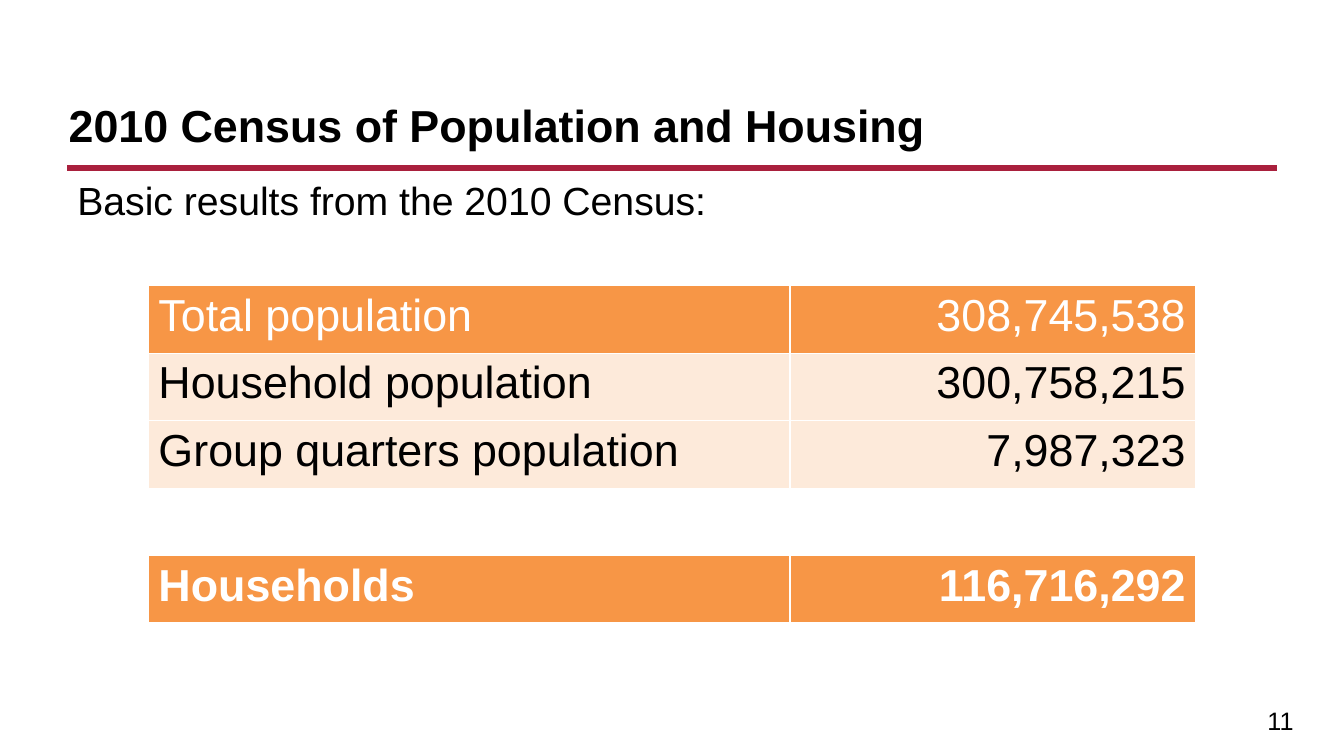
from lxml import etree
from pptx import Presentation
from pptx import util as u
from pptx.dml.color import RGBColor
from pptx.enum import shapes, text
from pptx.oxml import ns

COLORS = {"ink": "000000", "white": "FFFFFF", "rule": "A9203D",
          "orange": "F79646", "peach": "FDEADA"}
FONT = "Arial"
RIGHT = text.PP_ALIGN.RIGHT

# label, value, fill, text colour, bold
CENSUS_ROWS = [
    ("Total population", "308,745,538", "orange", "white", False),
    ("Household population", "300,758,215", "peach", "ink", False),
    ("Group quarters population", "7,987,323", "peach", "ink", False),
    ("", "", "white", "ink", False),
    ("Households", "116,716,292", "orange", "white", True),
]


def rgb(name):
    return RGBColor.from_string(COLORS[name])


def write(tf, words, size, color="ink", bold=False, align=None, spacing=None):
    p = tf.paragraphs[0]
    p.alignment = align
    p.line_spacing = spacing
    p.font.size = u.Pt(size)
    if words:
        r = p.add_run()
        r.text = words
        r.font.name = FONT
        r.font.size = u.Pt(size)
        r.font.bold = bold
        r.font.color.rgb = rgb(color)


def add_text(s, box, words, size, anchor=text.MSO_ANCHOR.TOP, **fmt):
    tf = s.shapes.add_textbox(*map(u.Cm, box)).text_frame
    tf.word_wrap = True
    tf.vertical_anchor = anchor
    write(tf, words, size, **fmt)


def border_cell(cell, color="white", width=1):
    tcPr = cell._tc.get_or_add_tcPr()
    for i, side in enumerate(("a:lnL", "a:lnR", "a:lnT", "a:lnB")):
        ln = etree.Element(ns.qn(side), w=str(u.Pt(width)))
        fill = etree.SubElement(ln, ns.qn("a:solidFill"))
        etree.SubElement(fill, ns.qn("a:srgbClr"), val=COLORS[color])
        tcPr.insert(i, ln)


def add_header(s, left, top, width, height):
    # Title sits on the rule along the bottom of the box
    add_text(s, (left - 0.22, top, width, height - 0.3),
             "2010 Census of Population and Housing", 32,
             anchor=text.MSO_ANCHOR.BOTTOM, bold=True)
    y = u.Cm(top + height)
    rule = s.shapes.add_connector(shapes.MSO_CONNECTOR.STRAIGHT,
                                  u.Cm(left), y, u.Cm(left + width), y)
    rule.line.color.rgb = rgb("rule")
    rule.line.width = u.Pt(4.5)
    etree.SubElement(rule._element.spPr, ns.qn("a:effectLst"))


def add_census_table(s, left, top, width, height):
    box = map(u.Cm, (left, top, width, height))
    table = s.shapes.add_table(len(CENSUS_ROWS), 2, *box).table
    label_width = 16.17
    table.columns[0].width = u.Cm(label_width)
    table.columns[1].width = u.Cm(width - label_width)
    for i, (label, value, fill, color, bold) in enumerate(CENSUS_ROWS):
        for j, (words, align) in enumerate(((label, None), (value, RIGHT))):
            cell = table.cell(i, j)
            cell.fill.solid()
            cell.fill.fore_color.rgb = rgb(fill)
            border_cell(cell)
            write(cell.text_frame, words, 32, color=color, bold=bold, align=align)


def main():
    prs = Presentation()
    prs.slide_width, prs.slide_height = u.Cm(33.87), u.Cm(19.05)
    s = prs.slides.add_slide(prs.slide_layouts[6])

    # Title and rule
    add_header(s, 1.7, 0.76, 30.48, 3.48)
    # Table of counts
    add_census_table(s, 3.74, 7.2, 26.4, 8.5)
    # Lead-in line
    add_text(s, (1.7, 4.45, 30.48, 4.65),
             "Basic results from the 2010 Census:", 28, spacing=0.9)
    # Page number
    add_text(s, (25.65, 17.65, 7.2, 1), "11", 18, align=RIGHT)

    prs.save("out.pptx")


if __name__ == "__main__":
    main()
